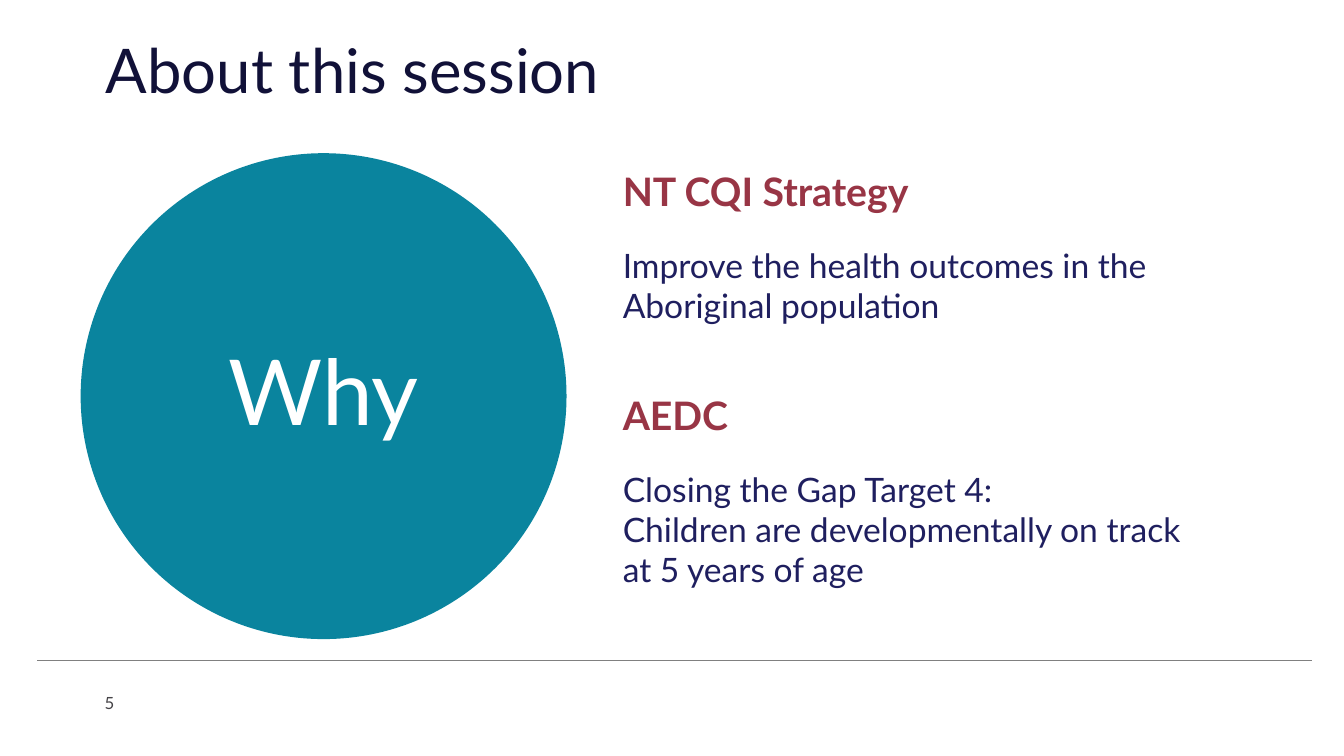
from lxml import etree
from pptx import Presentation
from pptx.dml.color import RGBColor
from pptx.enum.shapes import MSO_CONNECTOR, MSO_SHAPE
from pptx.enum.text import MSO_ANCHOR, MSO_AUTO_SIZE, PP_ALIGN
from pptx.oxml.ns import qn
from pptx.util import Inches, Pt

LINE, OVAL = MSO_CONNECTOR.STRAIGHT, MSO_SHAPE.OVAL
TOP, MIDDLE = MSO_ANCHOR.TOP, MSO_ANCHOR.MIDDLE
LEFT, CENTER = PP_ALIGN.LEFT, PP_ALIGN.CENTER
FIXED = MSO_AUTO_SIZE.NONE
TITLE_ONLY = 5

FONT = "Lato"
COLORS = {"title": "111138", "head": "983545", "body": "1F1F5F",
          "disc": "0A849E", "white": "FFFFFF", "rule": "808080",
          "number": "454347"}


def color(name):
    return RGBColor.from_string(COLORS[name])


def grid(*cells):
    """Turn columns and rows into lengths; ten cells make an inch."""
    return [Inches(cell / 10) for cell in cells]


class Page:
    def __init__(self, deck):
        self.slide = deck.slides.add_slide(deck.slide_layouts[TITLE_ONLY])
        self.shapes = self.slide.shapes

    def frame(self, shape, anchor=TOP):
        frame = shape.text_frame
        frame.word_wrap = True
        frame.auto_size = FIXED
        frame.vertical_anchor = anchor
        return frame

    def add_text(self, par, text, size, ink, bold=False, align=LEFT,
                 lead=None, before=0):
        par.alignment = align
        par.space_before = Pt(before)
        if lead:
            par.line_spacing = lead
        run = par.add_run()
        run.text = text
        font = run.font
        font.name, font.size, font.bold = FONT, Pt(size), bold
        font.color.rgb = color(ink)

    def title(self, text, *box):
        shape = self.shapes.title
        shape.left, shape.top, shape.width, shape.height = grid(*box)
        self.add_text(self.frame(shape).paragraphs[0], text, 44, "title",
                      lead=Pt(43.9))

    def rule(self, *ends):
        line = self.shapes.add_connector(LINE, *grid(*ends))
        line.line.color.rgb = color("rule")
        line.line.width = Pt(1)
        etree.SubElement(line._element.spPr, qn("a:effectLst"))

    def disc(self, text, *box):
        shape = self.shapes.add_shape(OVAL, *grid(*box))
        shape.shadow.inherit = False
        shape.fill.solid()
        shape.fill.fore_color.rgb = color("disc")
        shape.line.fill.background()
        self.add_text(self.frame(shape, MIDDLE).paragraphs[0], text, 65,
                      "white", align=CENTER, lead=0.9)

    def label(self, text, *box):
        shape = self.shapes.add_textbox(*grid(*box))
        self.add_text(self.frame(shape).paragraphs[0], text, 12, "number")

    def topic(self, head, lines, *box, lead=None):
        """Place a bold heading with body paragraphs under it."""
        frame = self.frame(self.shapes.add_textbox(*grid(*box)))
        self.add_text(frame.paragraphs[0], head, 28, "head", True, lead=lead)
        for row, line in enumerate(lines):
            self.add_text(frame.add_paragraph(), line, 24, "body",
                          before=0 if row else 21.6)


def main():
    deck = Presentation()
    deck.slide_width, deck.slide_height = grid(133.33, 75)
    page = Page(deck)
    page.rule(3.7, 65.5, 130.2, 65.5)
    page.label("5", 9.4, 68.2, 5.5, 3)
    page.title("About this session", 9.5, 3.9, 114.9, 7.9)
    page.disc("Why", 8, 15.2, 48.2, 48.2)
    page.topic("NT CQI Strategy",
               ["Improve the health outcomes in the Aboriginal population"],
               60.8, 16.1, 66.6, 16.8)
    page.topic("AEDC",
               ["Closing the Gap Target 4:",
                "Children are developmentally on track at 5 years of age"],
               60.8, 39.3, 58.8, 23, lead=Pt(26.5))
    deck.save("out.pptx")


if __name__ == "__main__":
    main()
